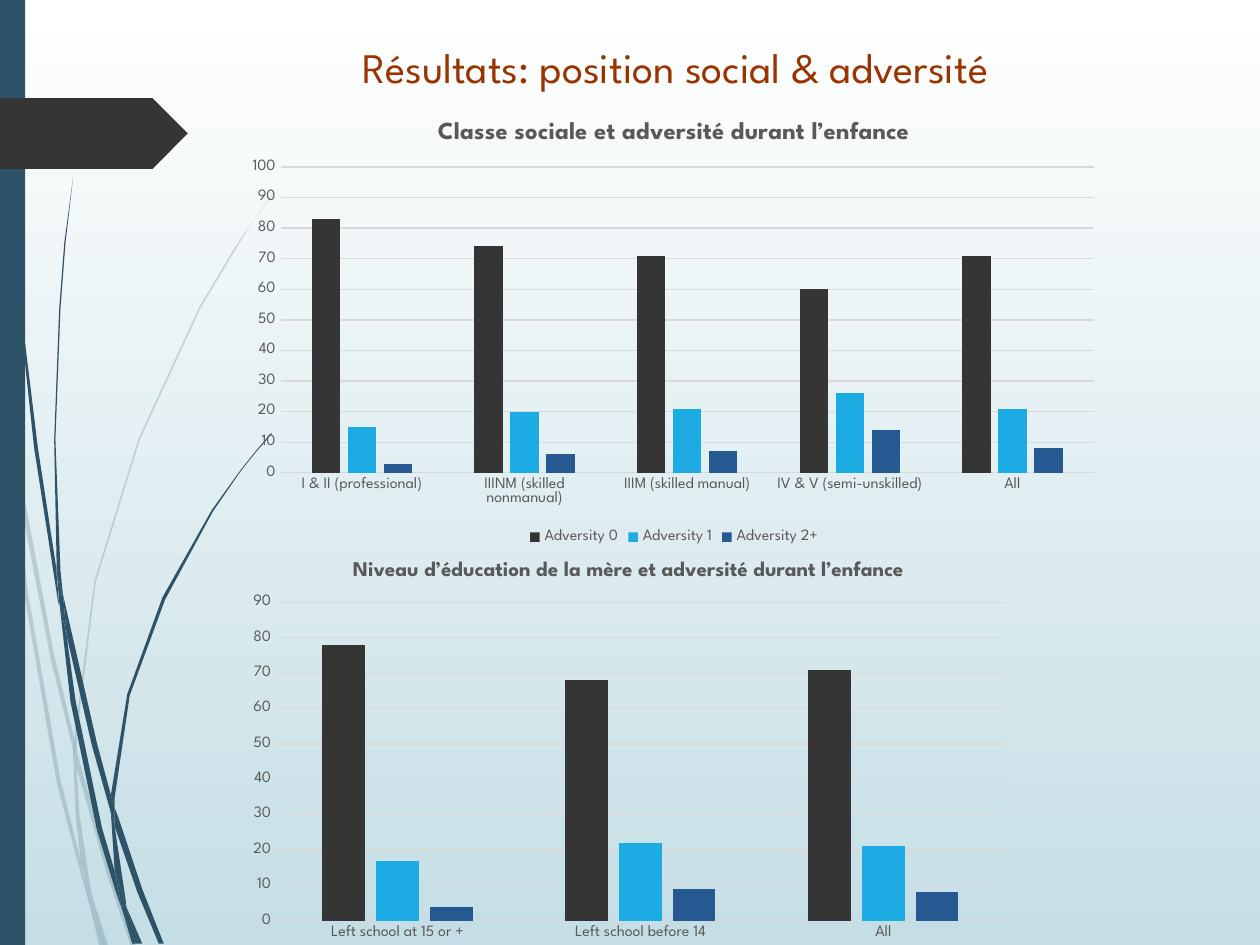
import pptx
import pptx.chart.data
import pptx.dml.color
import pptx.enum.chart
import pptx.enum.shapes
import pptx.enum.text
import pptx.oxml.ns
import pptx.oxml.xmlchemy
import pptx.util
from dataclasses import dataclass

Inches = pptx.util.Inches
Pt = pptx.util.Pt
qn = pptx.oxml.ns.qn


@dataclass(frozen=True)
class Theme:
    font: str = "League Spartan"
    petrol: str = "2E5369"
    charcoal: str = "353535"
    heading: str = "993300"
    text: str = "595959"
    grid: str = "D9D9D9"
    series: tuple = ("353535", "1CACE3", "265991")
    background: tuple = ("FFFFFF", "C5DEE5")
    heading_size: int = 24
    label_size: int = 9


THEME = Theme()

# Outlines of the grass blades, in inches on the slide.
PALE_BLADES = [
    [(.08, 3.5), (.06, 3.22), (0, 2.82), (0, 2.99), (.07, 3.44)],
    [(.4, 5.22), (.59, 5.99), (.59, 5.86), (.43, 5.2), (.1, 3.45), (.12, 3.76)],
    [(.64, 6.07), (.61, 5.96), (.61, 6.1), (.85, 6.94), (1.04, 7.51), (1.08, 7.51),
     (.88, 6.92)],
    [(.83, 7.51), (.86, 7.51), (.73, 7.11)],
    [(.64, 6.83), (.48, 6.19), (.22, 4.69), (.12, 3.76), (.08, 3.5), (.19, 4.7),
     (.45, 6.21), (.64, 6.93), (.7, 7.14), (.69, 7.07)],
    [(.58, 5.99), (.6, 6.46), (.64, 6.83), (.67, 6.92), (.73, 7.11), (.72, 7.06),
     (.63, 6.46), (.61, 6.1), (.61, 6.08)],
    [(.61, 5.84), (.76, 4.62), (1.11, 3.49), (1.59, 2.45), (1.87, 1.98), (2.01, 1.75),
     (2.17, 1.54), (2.17, 1.53), (2.01, 1.75), (1.86, 1.97), (1.58, 2.44), (1.1, 3.48),
     (.75, 4.61), (.59, 5.84), (.59, 5.86), (.61, 5.96)],
    [(.7, 7.14), (.79, 7.51), (.82, 7.51)],
    [(.61, 6.08), (.61, 6.1), (.61, 5.96), (.59, 5.86), (.58, 5.99)],
    [(.67, 6.92), (.65, 6.83), (.69, 7.07), (.7, 7.14), (.82, 7.51), (.83, 7.51),
     (.73, 7.11)],
]
DARK_BLADES = [
    [(.05, 1.1), (.14, 2.33), (.27, 3.55), (.46, 4.77), (.47, 4.81), (.45, 4.57),
     (.45, 4.53), (.3, 3.55), (.15, 2.32), (.06, 1.09), (.04, .48), (.03, 0), (.02, 0),
     (.03, .48)],
    [(.73, 5.92), (.88, 6.45), (.88, 6.33), (.88, 6.31), (.77, 5.9), (.5, 4.72),
     (.53, 5.05)],
    [(.94, 6.49), (.91, 6.41), (.91, 6.56), (1.09, 7.08), (1.26, 7.49), (1.3, 7.49),
     (1.13, 7.06)],
    [(.91, 6.91), (.81, 6.57), (.6, 5.56), (.53, 5.05), (.47, 4.77), (.56, 5.57),
     (.77, 6.59), (.92, 7.08), (.97, 7.22), (.96, 7.17)],
    [(.5, 4.72), (.48, 4.53), (.44, 3.49), (.48, 2.45), (.52, 1.93), (.58, 1.41),
     (.51, 1.93), (.47, 2.45), (.43, 3.49), (.45, 4.49), (.49, 4.72)],
    [(1.1, 7.49), (1.13, 7.49), (1, 7.19)],
    [(.47, 4.77), (.53, 5.05), (.5, 4.72), (.49, 4.72), (.45, 4.49), (.45, 4.53)],
    [(.91, 6.33), (1.03, 5.52), (1.31, 4.76), (1.69, 4.06), (1.91, 3.74), (2.03, 3.59),
     (2.16, 3.44), (2.15, 3.44), (2.03, 3.58), (1.91, 3.73), (1.68, 4.05), (1.29, 4.74),
     (1.01, 5.51), (.88, 6.31), (.91, 6.41)],
    [(.97, 7.22), (1.05, 7.49), (1.08, 7.49)],
    [(.88, 6.45), (.91, 6.91), (.96, 7.06), (1, 7.19), (1, 7.16), (.91, 6.56),
     (.9, 6.51)],
    [(.88, 6.45), (.9, 6.51), (.91, 6.56), (.91, 6.41), (.88, 6.31), (.88, 6.33)],
    [(.96, 7.06), (.91, 6.91), (.96, 7.17), (.97, 7.22), (1.08, 7.49), (1.1, 7.49),
     (1, 7.19)],
]


def rgb(color):
    return pptx.dml.color.RGBColor.from_string(color)


def add_node(parent, tag, value=None):
    node = pptx.oxml.xmlchemy.OxmlElement(tag)
    if value is not None:
        node.set("val", str(value))
    parent.append(node)
    return node


def style_font(font, size, color=THEME.text, bold=False):
    font.name = THEME.font
    font.size = Pt(size)
    font.bold = bold
    font.color.rgb = rgb(color)


def fill_flat(sp, color, opacity=100):
    """Solid fill without outline or shadow; opacity in percent."""
    sp.shadow.inherit = False
    sp.line.fill.background()
    sp.fill.solid()
    sp.fill.fore_color.rgb = rgb(color)
    if opacity < 100:
        add_node(sp._element.spPr.find(qn("a:solidFill"))[0], "a:alpha", opacity * 1000)


def set_background(s):
    fill = s.background.fill
    fill.gradient()
    fill.gradient_angle = 270
    for stop, color in zip(fill.gradient_stops, THEME.background):
        stop.color.rgb = rgb(color)


def add_blades(s, blades, opacity):
    for blade in blades:
        points = [(Inches(x), Inches(y)) for x, y in blade]
        builder = s.shapes.build_freeform(*points[0])
        builder.add_line_segments(points[1:], close=True)
        fill_flat(builder.convert_to_shape(), THEME.petrol, opacity)


def add_block(s, kind, box, color):
    fill_flat(s.shapes.add_shape(kind, *map(Inches, box)), color)


def place_plot(chart, area):
    """Fix the inner plot area, as fractions of the chart: x, y, w, h."""
    plot_area = chart._chartSpace.chart.plotArea
    for old in plot_area.findall(qn("c:layout")):
        plot_area.remove(old)
    layout = add_node(plot_area, "c:layout")
    plot_area.insert(0, layout)
    manual = add_node(layout, "c:manualLayout")
    settings = [("layoutTarget", "inner"), ("xMode", "edge"), ("yMode", "edge")]
    for name, value in settings + list(zip("xywh", area)):
        add_node(manual, "c:" + name, value)


def style_axis(axis):
    style_font(axis.tick_labels.font, THEME.label_size)
    axis.major_tick_mark = axis.minor_tick_mark = pptx.enum.chart.XL_TICK_MARK.NONE


def style_line(line):
    line.color.rgb = rgb(THEME.grid)
    line.width = Pt(0.75)


def add_column_chart(s, box, title, title_size, categories, values, top, area):
    data = pptx.chart.data.CategoryChartData()
    data.categories = categories
    for name, row in zip(("Adversity 0", "Adversity 1", "Adversity 2+"), values):
        data.add_series(name, row)
    chart = s.shapes.add_chart(pptx.enum.chart.XL_CHART_TYPE.COLUMN_CLUSTERED,
                               *map(Inches, box), data).chart
    style_font(chart.font, 10, "000000")
    chart.has_title = True
    r = chart.chart_title.text_frame.paragraphs[0].add_run()
    r.text = title
    style_font(r.font, title_size, bold=True)
    chart.has_legend = True
    chart.legend.position = pptx.enum.chart.XL_LEGEND_POSITION.BOTTOM
    chart.legend.include_in_layout = False
    style_font(chart.legend.font, THEME.label_size)

    style_axis(chart.category_axis)
    style_line(chart.category_axis.format.line)
    axis = chart.value_axis
    style_axis(axis)
    axis.minimum_scale, axis.maximum_scale, axis.major_unit = 0, top, 10
    axis.format.line.fill.background()
    style_line(axis.major_gridlines.format.line)

    plot = chart.plots[0]
    plot.vary_by_categories = False
    plot.gap_width, plot.overlap = 219, -27
    for series, color in zip(plot.series, THEME.series):
        series.format.fill.solid()
        series.format.fill.fore_color.rgb = rgb(color)
    place_plot(chart, area)


def add_heading(s, text):
    tf = s.shapes.add_textbox(*map(Inches, (0.96, 0.28, 8.8, 0.5))).text_frame
    tf.word_wrap = True
    p = tf.paragraphs[0]
    p.alignment = pptx.enum.text.PP_ALIGN.CENTER
    r = p.add_run()
    r.text = text
    style_font(r.font, THEME.heading_size, THEME.heading)


def main():
    prs = pptx.Presentation()
    prs.slide_width, prs.slide_height = Inches(10), Inches(7.5)
    s = prs.slides.add_slide(prs.slide_layouts[6])
    shape = pptx.enum.shapes.MSO_SHAPE
    set_background(s)
    add_blades(s, PALE_BLADES, 20)
    add_blades(s, DARK_BLADES, 100)
    add_block(s, shape.RECTANGLE, (0, 0, 0.2, 7.5), THEME.petrol)
    add_block(s, shape.PENTAGON, (0, 0.78, 1.49, 0.56), THEME.charcoal)
    add_column_chart(
        s, (1.88, 0.79, 6.94, 3.57), "Classe sociale et adversité durant l’enfance", 14,
        ["I & II (professional)", "IIINM (skilled nonmanual)", "IIIM (skilled manual)",
         "IV & V (semi-unskilled)", "All"],
        [(83, 74, 71, 60, 71), (15, 20, 21, 26, 21), (3, 6, 7, 14, 8)],
        100, (0.05, 0.15, 0.93, 0.68))
    add_column_chart(
        s, (1.88, 4.29, 6.22, 3.51),
        "Niveau d’éducation de la mère et adversité durant l’enfance", 12,
        ["Left school at 15 or +", "Left school before 14", "All"],
        [(78, 68, 71), (17, 22, 21), (4, 9, 8)],
        90, (0.05, 0.14, 0.93, 0.72))
    add_heading(s, "Résultats: position social & adversité")
    prs.save("out.pptx")


if __name__ == "__main__":
    main()
